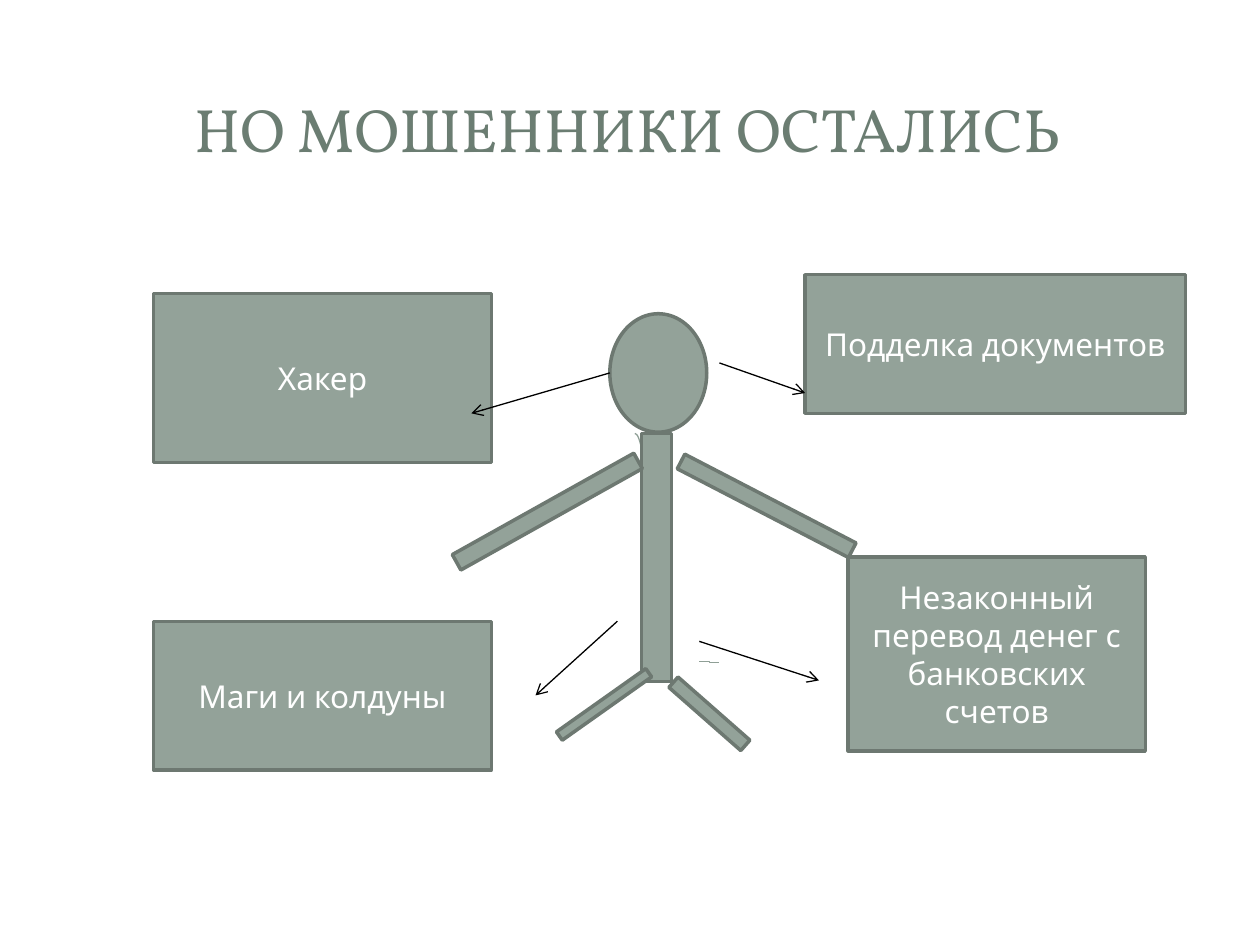
from dataclasses import dataclass

from lxml.etree import SubElement
from pptx import Presentation
from pptx.dml.color import RGBColor
from pptx.enum.shapes import MSO_CONNECTOR, MSO_SHAPE
from pptx.enum.text import MSO_ANCHOR, PP_ALIGN
from pptx.oxml.ns import qn
from pptx.util import Pt


@dataclass(frozen=True)
class Theme:
    title: RGBColor = RGBColor.from_string("6B7D72")
    fill: RGBColor = RGBColor.from_string("93A299")
    outline: RGBColor = RGBColor.from_string("6D7871")
    stroke: RGBColor = RGBColor.from_string("8F9F96")
    arrow: RGBColor = RGBColor.from_string("000000")
    label: RGBColor = RGBColor.from_string("FFFFFF")
    title_font: str = "Vollkorn"
    label_font: str = "League Spartan"
    title_size: float = 35
    label_size: float = 18
    thick: float = 2
    thin: float = 0.75


theme = Theme()


def write(shape, text, font, size, color):
    frame = shape.text_frame
    frame.word_wrap = True
    frame.vertical_anchor = MSO_ANCHOR.MIDDLE
    para = frame.paragraphs[0]
    para.alignment = PP_ALIGN.CENTER
    span = para.add_run()
    span.text = text
    span.font.name = font
    span.font.size = Pt(size)
    span.font.color.rgb = color


def connect(kind, points, color):
    line = page.shapes.add_connector(kind, *map(Pt, points))
    line.line.color.rgb = color
    line.line.width = Pt(theme.thin)
    SubElement(line._element.spPr, qn("a:effectLst"))
    return line


deck = Presentation()
deck.slide_width, deck.slide_height = Pt(720), Pt(540)
page = deck.slides.add_slide(deck.slide_layouts[6])

title = page.shapes.add_textbox(Pt(33.8), Pt(32.4), Pt(650.2), Pt(82.1))
write(title, "НО МОШЕННИКИ ОСТАЛИСЬ", theme.title_font, theme.title_size, theme.title)

shoulder = page.shapes.add_shape(MSO_SHAPE.ARC, Pt(354.2), Pt(247.7), Pt(17.3), Pt(169.9))
shoulder.shadow.inherit = False
shoulder.fill.background()
shoulder.line.color.rgb = theme.stroke
shoulder.line.width = Pt(theme.thin)

connect(MSO_CONNECTOR.ELBOW, (399.6, 378, 411.1, 378.7), theme.stroke)

left_column, left_width = 87.8, 193
head, bar = MSO_SHAPE.OVAL, MSO_SHAPE.RECTANGLE
blocks = [
    (head, 348.5, 179.3, 55.4, 67.7, 0, ""),
    (bar, 366.5, 247.7, 17.3, 141.8, 0, ""),
    (bar, 253.4, 287.3, 118.8, 10.1, 330.8, ""),
    (bar, 378, 403.9, 54.7, 7.9, 221.3, ""),
    (bar, 313.9, 399.6, 62.6, 5.8, 324.7, ""),
    (bar, left_column, 355, left_width, 85, 0, "Маги и колдуны"),
    (bar, left_column, 167.8, left_width, 96.5, 0, "Хакер"),
    (bar, 460.1, 157, 217.4, 79.2, 0, "Подделка документов"),
    (bar, 484.6, 318.2, 169.9, 110.9, 0, "Незаконный перевод денег с банковских счетов"),
    (bar, 383, 284.4, 110.2, 9.4, 27.4, ""),
]
for kind, left, top, width, height, rotation, text in blocks:
    box = page.shapes.add_shape(kind, Pt(left), Pt(top), Pt(width), Pt(height))
    box.shadow.inherit = False
    box.rotation = rotation
    box.fill.solid()
    box.fill.fore_color.rgb = theme.fill
    box.line.color.rgb = theme.outline
    box.line.width = Pt(theme.thick)
    if text:
        write(box, text, theme.label_font, theme.label_size, theme.label)

arrows = [
    (348.5, 213.1, 269.3, 236.2),
    (411.1, 207.4, 460.1, 224.6),
    (399.6, 366.5, 468, 388.8),
    (352.8, 355, 306, 397.4),
]
for points in arrows:
    arrow = connect(MSO_CONNECTOR.STRAIGHT, points, theme.arrow)
    SubElement(arrow.line._get_or_add_ln(), qn("a:tailEnd"), type="arrow")

deck.save("out.pptx")
